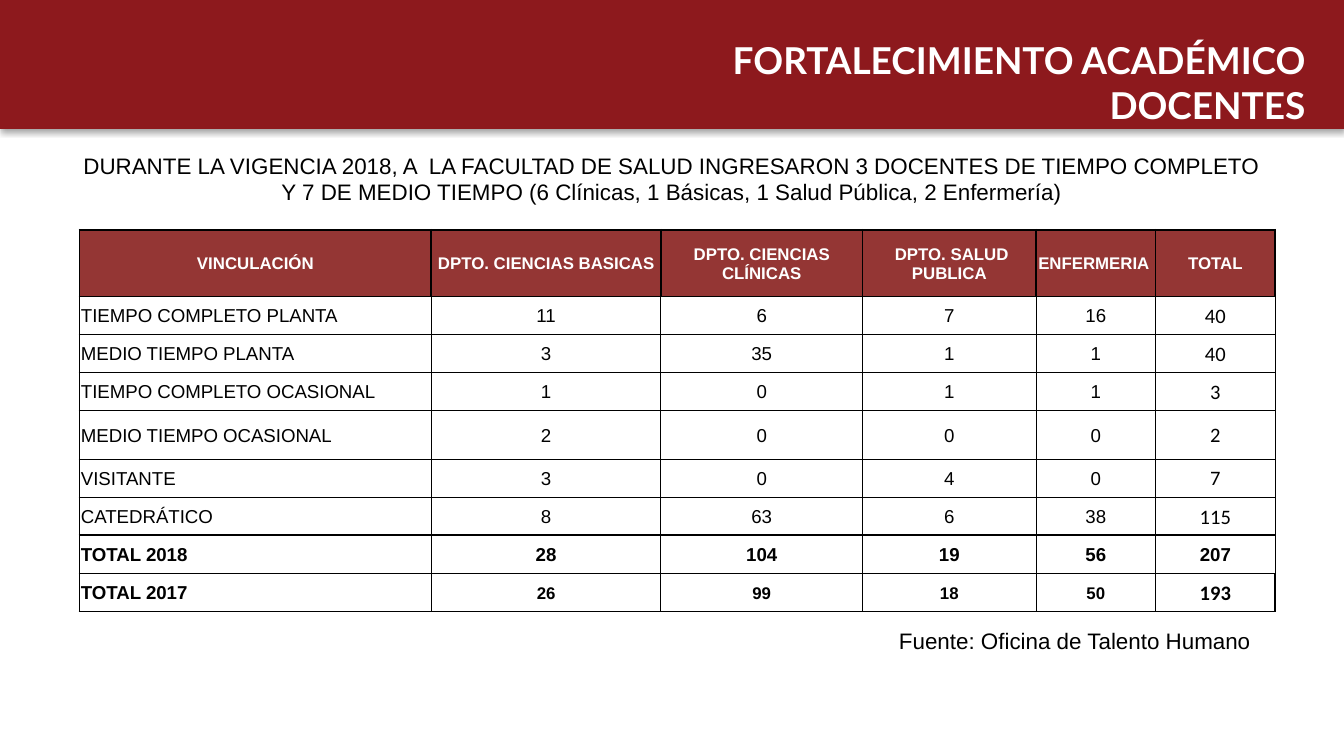
import pptx
import pptx.dml.color
import pptx.enum.shapes
import pptx.enum.text
import pptx.oxml.ns
import pptx.util
from lxml import etree

Cm = pptx.util.Cm
Pt = pptx.util.Pt
Align = pptx.enum.text.PP_ALIGN
Anchor = pptx.enum.text.MSO_ANCHOR
qn = pptx.oxml.ns.qn

HEADS = ["VINCULACIÓN", "DPTO. CIENCIAS BASICAS", "DPTO. CIENCIAS CLÍNICAS",
         " DPTO. SALUD PUBLICA", "ENFERMERIA ", "TOTAL"]
STAFF = [
    ["TIEMPO COMPLETO PLANTA", 11, 6, 7, 16, 40],
    ["MEDIO TIEMPO PLANTA", 3, 35, 1, 1, 40],
    ["TIEMPO COMPLETO OCASIONAL", 1, 0, 1, 1, 3],
    ["MEDIO TIEMPO OCASIONAL", 2, 0, 0, 0, 2],
    ["VISITANTE", 3, 0, 4, 0, 7],
    ["CATEDRÁTICO", 8, 63, 6, 38, 115],
    ["TOTAL 2018", 28, 104, 19, 56, 207],
    ["TOTAL 2017", 26, 99, 18, 50, 193],
]
WIDTHS = [6.65, 4.34, 3.81, 3.28, 2.26, 2.26]
HEIGHTS = [1.26] + [0.72] * 3 + [0.91] + [0.72] * 4


def color(code):
    return pptx.dml.color.RGBColor.from_string(code)


class Page:
    red = "8D191D"
    head = "943634"
    dark = "000000"
    light = "FFFFFF"
    font = "Arial"

    def __init__(self, slide):
        self.slide = slide

    def band(self, width, height):
        shape = self.slide.shapes.add_shape(
            pptx.enum.shapes.MSO_SHAPE.RECTANGLE, 0, 0, width, height)
        shape.fill.solid()
        shape.fill.fore_color.rgb = color(self.red)
        shape.line.color.rgb = color(self.red)
        shape.line.width = Pt(0.75)
        shape.shadow.inherit = False
        effects = shape._element.spPr.find(qn("a:effectLst"))
        shadow = etree.SubElement(
            effects, qn("a:outerShdw"), blurRad=str(Pt(3.1)),
            dist=str(Pt(1.8)), dir="5400000", rotWithShape="0")
        tint = etree.SubElement(shadow, qn("a:srgbClr"), val=self.dark)
        etree.SubElement(tint, qn("a:alpha"), val="35000")

    def runs(self, para, lines, size, tone, font=None, bold=False):
        for num, line in enumerate(lines):
            if num:
                para.add_line_break()
            run = para.add_run()
            run.text = line
            run.font.name = font or self.font
            run.font.size = Pt(size)
            run.font.bold = bold
            run.font.color.rgb = color(tone)

    def text(self, area, lines, size, tone, align=Align.LEFT,
             anchor=Anchor.TOP, font=None, bold=False):
        box = self.slide.shapes.add_textbox(*map(Cm, area))
        frame = box.text_frame
        frame.word_wrap = True
        frame.vertical_anchor = anchor
        if anchor == Anchor.BOTTOM:
            frame.margin_bottom = 0
        para = frame.paragraphs[0]
        para.alignment = align
        self.runs(para, lines, size, tone, font, bold)

    def edges(self, cell, widths):
        props = cell._tc.get_or_add_tcPr()
        for side, width in zip("LRTB", widths):
            line = etree.SubElement(props, qn("a:ln" + side), w=str(Pt(width)))
            fill = etree.SubElement(line, qn("a:solidFill"))
            etree.SubElement(fill, qn("a:srgbClr"), val=self.dark)

    def cell(self, cell, value, row, col):
        top = row == 0
        last = col == len(WIDTHS) - 1
        total = row > 6
        cell.margin_left = cell.margin_right = cell.margin_top = Cm(0.03)
        cell.margin_bottom = 0
        cell.vertical_anchor = Anchor.MIDDLE
        thick = [top or col == 0 or (row == 8 and last),
                 top or (row == 8 and col >= 4),
                 row < 2 or total,
                 (top and not last) or row > 5]
        self.edges(cell, [1 if wide else 0.5 for wide in thick])
        if top:
            cell.fill.solid()
            cell.fill.fore_color.rgb = color(self.head)
        else:
            cell.fill.background()
        size, font = 10, self.font
        if last and not top and row != 7:
            size, font = 11, "Calibri"
        elif top or (row == 8 and col):
            size = 9
        para = cell.text_frame.paragraphs[0]
        para.alignment = Align.CENTER if top or col else Align.LEFT
        self.runs(para, [str(value)], size, self.light if top else self.dark,
                  font, top or total)

    def table(self, left, top, rows):
        grid = self.slide.shapes.add_table(
            len(rows), len(WIDTHS), Cm(left), Cm(top),
            Cm(sum(WIDTHS)), Cm(sum(HEIGHTS))).table
        grid.first_row = False
        grid.horz_banding = False
        for col, width in enumerate(WIDTHS):
            grid.columns[col].width = Cm(width)
        for row, values in enumerate(rows):
            grid.rows[row].height = Cm(HEIGHTS[row])
            for col, value in enumerate(values):
                self.cell(grid.cell(row, col), value, row, col)


def main():
    deck = pptx.Presentation()
    deck.slide_width = Cm(25.4)
    deck.slide_height = Cm(14.28)
    page = Page(deck.slides.add_slide(deck.slide_layouts[6]))
    page.band(deck.slide_width, Cm(2.42))
    page.text((1.9, 0.3, 23.02, 2.09),
              ["FORTALECIMIENTO ACADÉMICO", "DOCENTES"], 19.8, page.light,
              Align.RIGHT, Anchor.BOTTOM, "Lato", True)
    page.text((1.27, 2.74, 22.86, 9.2),
              ["DURANTE LA VIGENCIA 2018, A  LA FACULTAD DE SALUD INGRESARON "
               "3 DOCENTES DE TIEMPO COMPLETO Y 7 DE MEDIO TIEMPO (6 Clínicas, "
               "1 Básicas, 1 Salud Pública, 2 Enfermería)"],
              12, page.dark, Align.CENTER)
    page.text((16.74, 11.73, 7.16, 0.77),
              ["Fuente: Oficina de Talento Humano"], 12, page.dark)
    page.table(1.5, 4.34, [HEADS] + STAFF)
    deck.save("out.pptx")


if __name__ == "__main__":
    main()
